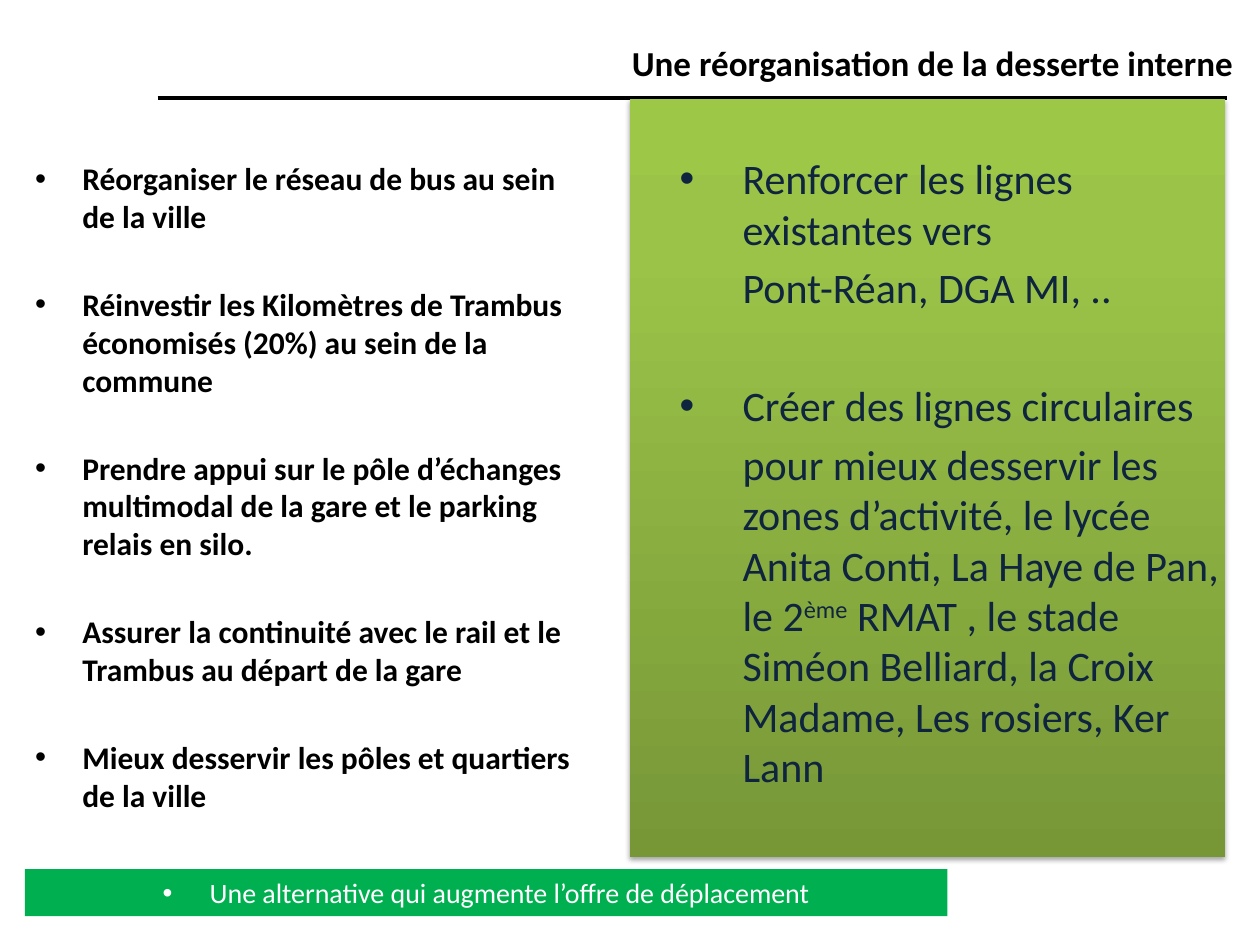
from copy import deepcopy

from lxml.etree import SubElement
from pptx import Presentation
from pptx.dml.color import RGBColor
from pptx.enum.shapes import MSO_CONNECTOR, MSO_SHAPE
from pptx.enum.text import MSO_ANCHOR, PP_ALIGN
from pptx.oxml.ns import qn
from pptx.util import Cm, Pt

BLACK = RGBColor(0x00, 0x00, 0x00)
WHITE = RGBColor(0xFF, 0xFF, 0xFF)
NAVY = RGBColor(0x0F, 0x24, 0x3E)
GREEN = RGBColor(0x00, 0xB0, 0x50)
OLIVE_STOPS = [
    (0, RGBColor(0x77, 0x97, 0x37)),
    (0.8, RGBColor(0x9B, 0xC3, 0x48)),
    (1, RGBColor(0x9D, 0xC7, 0x46)),
]

TITLE = {"size": Pt(20), "bold": True}
GOAL = {"size": Pt(18), "bold": True}
ACTION = {"size": Pt(24)}
BANNER = {"size": Pt(16)}

GOALS = [
    "Réorganiser le réseau de bus au sein de la ville",
    "Réinvestir les Kilomètres de Trambus économisés (20%) au sein de la commune",
    "Prendre appui sur le pôle d’échanges multimodal de la gare et le parking relais en silo.",
    "Assurer la continuité avec le rail et le Trambus au départ de la gare",
    "Mieux desservir les pôles et quartiers de la ville",
]
# Each action: the bulleted line, then its continuation as (text, superscript) runs
ACTIONS = [
    ("Renforcer les lignes existantes vers", [("Pont-Réan, DGA MI, ..", False)]),
    ("Créer des lignes circulaires", [
        ("pour mieux desservir les zones d’activité, le lycée Anita Conti, "
         "La Haye de Pan, le 2", False),
        ("ème", True),
        (" RMAT , le stade Siméon Belliard, la Croix Madame, Les rosiers, Ker Lann", False),
    ]),
]


class SlideBuilder:
    def __init__(self, slide, font="Calibri"):
        self.slide = slide
        self.font = font

    def rule(self, x1, y, x2, width):
        line = self.slide.shapes.add_connector(
            MSO_CONNECTOR.STRAIGHT, Cm(x1), Cm(y), Cm(x2), Cm(y))
        line.line.color.rgb = BLACK
        line.line.width = Pt(width)
        SubElement(line._element.spPr, qn("a:effectLst"))

    def frame(self, sp, insets, anchor):
        """Set wrapping, anchor and insets (left, top, right, bottom)."""
        tf = sp.text_frame
        tf.word_wrap = True
        tf.vertical_anchor = anchor
        for side, inset in zip(("left", "top", "right", "bottom"), insets):
            setattr(tf, f"margin_{side}", Cm(inset))
        return tf

    def text_box(self, box, insets, anchor=MSO_ANCHOR.TOP):
        sp = self.slide.shapes.add_textbox(*map(Cm, box))
        return self.frame(sp, insets, anchor)

    def panel(self, box, insets, anchor=MSO_ANCHOR.TOP, fill=None, stops=None):
        sp = self.slide.shapes.add_shape(MSO_SHAPE.RECTANGLE, *map(Cm, box))
        sp.shadow.inherit = False
        sp.line.fill.background()
        if stops:
            self.gradient(sp, stops)
            self.drop_shadow(sp)
        else:
            sp.fill.solid()
            sp.fill.fore_color.rgb = fill
        return self.frame(sp, insets, anchor)

    def gradient(self, sp, stops):
        """Fill from bottom to top with any number of stops."""
        sp.fill.gradient()
        sp.fill.gradient_angle = 90
        gs_list = sp._element.spPr.find(".//" + qn("a:gsLst"))
        while len(gs_list) < len(stops):
            gs_list.append(deepcopy(gs_list[0]))
        for stop, (position, color) in zip(sp.fill.gradient_stops, stops):
            stop.position = position
            stop.color.rgb = color

    def drop_shadow(self, sp):
        effects = sp._element.spPr.find(qn("a:effectLst"))
        shadow = SubElement(effects, qn("a:outerShdw"), blurRad=str(Pt(3.1)),
                            dist=str(Pt(1.8)), dir="5400000", rotWithShape="0")
        color = SubElement(shadow, qn("a:srgbClr"), val="000000")
        SubElement(color, qn("a:alpha"), val="35000")

    def paragraph(self, tf, runs, style, color, indent=0, bullet=False,
                  before=0, align=PP_ALIGN.LEFT):
        """Add (text, superscript) runs as one paragraph; the first has no space before."""
        first = not tf.paragraphs[0].runs
        p = tf.paragraphs[0] if first else tf.add_paragraph()
        p.alignment = align
        p.space_before = Pt(0 if first else before)
        pPr = p._p.get_or_add_pPr()
        pPr.set("marL", str(Cm(indent)))
        pPr.set("indent", str(-Cm(indent) if bullet else 0))
        if bullet:
            SubElement(pPr, qn("a:buFont"), typeface="Arial")
            SubElement(pPr, qn("a:buChar"), char="•")
        for text, superscript in runs:
            r = p.add_run()
            r.text = text
            for name, value in {"name": self.font, **style}.items():
                setattr(r.font, name, value)
            r.font.color.rgb = color
            if superscript:
                r._r.get_or_add_rPr().set("baseline", "30000")


def main():
    prs = Presentation()
    prs.slide_width, prs.slide_height = Cm(25.4), Cm(19.05)
    s = SlideBuilder(prs.slides.add_slide(prs.slide_layouts[6]))

    s.rule(3.18, 1.98, 24.74, 2.25)

    tf = s.text_box((12.5, 0, 12.9, 1.98), (0, 0.3, 0.3, 0.3), MSO_ANCHOR.BOTTOM)
    s.paragraph(tf, [(TITLE_TEXT, False)], TITLE, BLACK, align=PP_ALIGN.CENTER)

    tf = s.text_box((0.71, 2.13, 11.81, 15.6), (0, 1.08, 1, 1))
    for goal in GOALS:
        s.paragraph(tf, [(goal, False)], GOAL, BLACK, 0.95, True, before=28.7)

    tf = s.panel((12.7, 2, 12, 15.27), (1, 1.08, 0, 1), stops=OLIVE_STOPS)
    for heading, details in ACTIONS:
        s.paragraph(tf, [(heading, False)], ACTION, NAVY, 1.27, True, before=38.4)
        s.paragraph(tf, details, ACTION, NAVY, 1.27, before=4.8)

    tf = s.panel((0.5, 17.52, 18.6, 0.95), (0.25, 0.13, 0.25, 0.13),
                 MSO_ANCHOR.MIDDLE, fill=GREEN)
    s.paragraph(tf, [(BANNER_TEXT, False)], BANNER, WHITE, 0.95, True,
                align=PP_ALIGN.CENTER)

    prs.save("out.pptx")


TITLE_TEXT = "Une réorganisation de la desserte interne"
BANNER_TEXT = "Une alternative qui augmente l’offre de déplacement"

if __name__ == "__main__":
    main()
